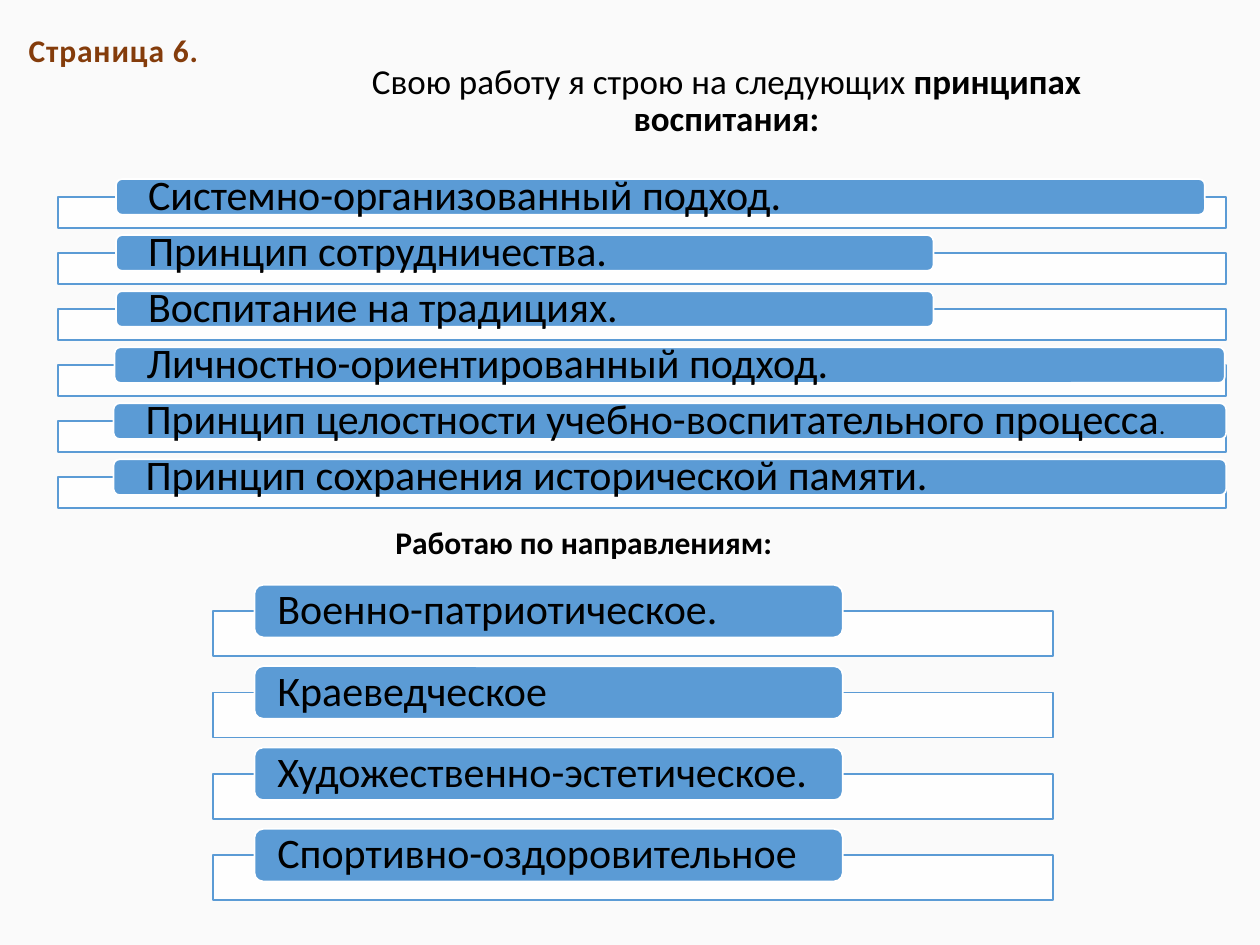
"""Build the slide on the principles and directions of educational work."""
from dataclasses import dataclass

import pptx
import pptx.dml.color
import pptx.enum.shapes
import pptx.enum.text
import pptx.oxml.ns
import pptx.shapes.autoshape
import pptx.slide
import pptx.text.text
import pptx.util
from lxml import etree
from pptx.util import Cm, Pt

SHAPES = pptx.enum.shapes.MSO_SHAPE
ALIGN = pptx.enum.text.PP_ALIGN
ANCHOR = pptx.enum.text.MSO_ANCHOR
AUTO_SIZE = pptx.enum.text.MSO_AUTO_SIZE


@dataclass(frozen=True)
class Theme:
    font: str = "Calibri"
    background: str = "FAFAFA"
    accent: str = "5B9BD5"
    white: str = "FFFFFF"
    text: str = "000000"
    page: str = "843C0B"
    title_size: float = 20
    label_size: float = 24
    heading_size: float = 18
    small_size: float = 14


@dataclass(frozen=True)
class Label:
    text: str
    left: float
    width: float
    small_ending: str = ""


@dataclass(frozen=True)
class LabelList:
    labels: tuple[Label, ...]
    top: float
    pitch: float
    label_height: float
    inset: float
    frame_left: float
    frame_width: float
    frame_offset: float
    frame_height: float


THEME = Theme()

PRINCIPLES = LabelList(
    labels=(
        Label("Системно-организованный подход.", 2.34, 21.95),
        Label("Принцип сотрудничества.", 2.34, 16.48),
        Label("Воспитание на традициях.", 2.34, 16.48),
        Label("Личностно-ориентированный подход.", 2.31, 22.38),
        Label("Принцип целостности учебно-воспитательного процесса", 2.29, 22.43, "."),
        Label("Принцип сохранения исторической памяти.", 2.29, 22.43),
    ),
    top=3.61, pitch=1.13, label_height=0.72, inset=0.61,
    frame_left=1.17, frame_width=23.55, frame_offset=0.36, frame_height=0.63,
)

DIRECTIONS = LabelList(
    labels=tuple(
        Label(text, 5.13, 11.86)
        for text in (
            "Военно-патриотическое.",
            "Краеведческое",
            "Художественно-эстетическое.",
            "Спортивно-оздоровительное",
        )
    ),
    top=11.79, pitch=1.64, label_height=1.06, inset=0.41,
    frame_left=4.29, frame_width=16.94, frame_offset=0.53, frame_height=0.91,
)


def color(value: str) -> pptx.dml.color.RGBColor:
    """Return the colour for a hexadecimal value."""
    return pptx.dml.color.RGBColor.from_string(value)


def set_font(font: pptx.text.text.Font, size: float, value: str, bold: bool = False) -> None:
    """Apply the theme typeface with a size, colour and weight."""
    font.name = THEME.font
    font.size = Pt(size)
    font.bold = bold
    font.color.rgb = color(value)


def paint(shape: pptx.shapes.autoshape.Shape, fill: str, line: str) -> None:
    """Give a shape a flat fill and a one-point outline."""
    shape.shadow.inherit = False
    shape.fill.solid()
    shape.fill.fore_color.rgb = color(fill)
    shape.line.color.rgb = color(line)
    shape.line.width = Pt(1)


def set_opacity(shape: pptx.shapes.autoshape.Shape, percent: int) -> None:
    """Make the solid fill of a shape partly transparent."""
    qualified = pptx.oxml.ns.qn
    fill_color = shape.fill._xPr.find(qualified("a:solidFill")).find(qualified("a:srgbClr"))
    etree.SubElement(fill_color, qualified("a:alpha")).set("val", str(percent * 1000))


def add_label_list(slide: pptx.slide.Slide, label_list: LabelList) -> None:
    """Draw evenly spaced labels, each overlapping its own frame."""
    group = slide.shapes.add_group_shape()
    for index, label in enumerate(label_list.labels):
        top = label_list.top + index * label_list.pitch
        frame = group.shapes.add_shape(
            SHAPES.RECTANGLE, Cm(label_list.frame_left), Cm(top + label_list.frame_offset),
            Cm(label_list.frame_width), Cm(label_list.frame_height))
        paint(frame, THEME.white, THEME.accent)
        set_opacity(frame, 90)

        bar = group.shapes.add_shape(
            SHAPES.ROUNDED_RECTANGLE, Cm(label.left), Cm(top),
            Cm(label.width), Cm(label_list.label_height))
        paint(bar, THEME.accent, THEME.white)
        text_frame = bar.text_frame
        text_frame.word_wrap = True
        text_frame.vertical_anchor = ANCHOR.MIDDLE
        text_frame.margin_left = text_frame.margin_right = Cm(label_list.inset)
        text_frame.margin_top = text_frame.margin_bottom = 0
        paragraph = text_frame.paragraphs[0]
        paragraph.alignment = ALIGN.LEFT
        paragraph.line_spacing = 0.9
        set_font(paragraph.font, THEME.label_size, THEME.text)
        paragraph.add_run().text = label.text
        if label.small_ending:
            ending = paragraph.add_run()
            ending.text = label.small_ending
            ending.font.size = Pt(THEME.small_size)


def add_heading(slide: pptx.slide.Slide, text: str, left: float, top: float, width: float,
                value: str, wrap: bool, alignment: ALIGN) -> pptx.text.text._Run:
    """Add a bold one-line text box and return its run."""
    box = slide.shapes.add_textbox(Cm(left), Cm(top), Cm(width), Cm(1.03))
    box.text_frame.word_wrap = wrap
    box.text_frame.auto_size = AUTO_SIZE.SHAPE_TO_FIT_TEXT
    paragraph = box.text_frame.paragraphs[0]
    paragraph.alignment = alignment
    set_font(paragraph.font, THEME.heading_size, value, bold=True)
    run = paragraph.add_run()
    run.text = text
    return run


def fill_title(slide: pptx.slide.Slide) -> None:
    """Place and format the title."""
    title = slide.shapes.title
    title.left, title.top, title.width, title.height = Cm(1.7), Cm(1.4), Cm(21.9), Cm(1.3)
    title.text_frame.word_wrap = True
    title.text_frame.auto_size = AUTO_SIZE.NONE
    title.text_frame.vertical_anchor = ANCHOR.MIDDLE
    paragraph = title.text_frame.paragraphs[0]
    paragraph.alignment = ALIGN.CENTER
    paragraph.line_spacing = 0.9
    properties = paragraph._p.get_or_add_pPr()
    properties.set("marL", str(Cm(3.99)))
    properties.set("indent", "0")
    set_font(paragraph.font, THEME.title_size, THEME.text)
    paragraph.add_run().text = "Свою работу я строю на следующих"
    emphasis = paragraph.add_run()
    emphasis.text = " принципах воспитания:"
    emphasis.font.bold = True


def main() -> None:
    """Build and save the presentation."""
    presentation = pptx.Presentation()
    presentation.slide_width, presentation.slide_height = Cm(25.4), Cm(19.05)
    slide = presentation.slides.add_slide(presentation.slide_layouts[5])
    slide.background.fill.solid()
    slide.background.fill.fore_color.rgb = color(THEME.background)
    fill_title(slide)
    add_label_list(slide, PRINCIPLES)
    add_heading(slide, "Работаю по направлениям:", 5.33, 10.41, 12.88,
                THEME.text, True, ALIGN.CENTER)
    add_label_list(slide, DIRECTIONS)
    page = add_heading(slide, "Страница 6.", 0.33, 0.51, 3.99, THEME.page, False, ALIGN.LEFT)
    page._r.get_or_add_rPr().set("spc", "50")
    presentation.save("out.pptx")


if __name__ == "__main__":
    main()
